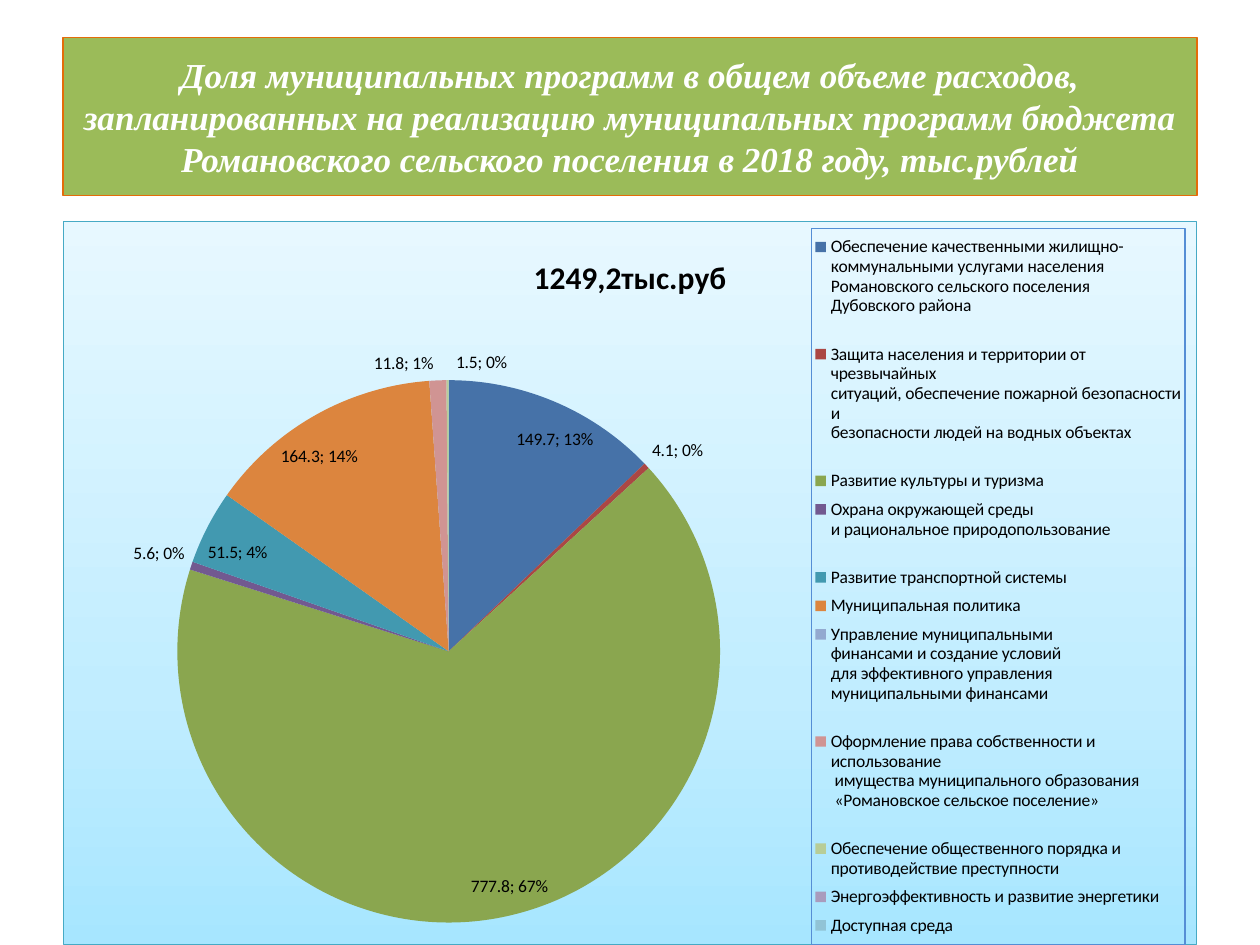
import pptx
import pptx.chart.data
import pptx.dml.color
import pptx.enum.chart
import pptx.enum.text
import pptx.oxml
import pptx.oxml.ns
import pptx.util

RGBColor = pptx.dml.color.RGBColor
Inches = pptx.util.Inches
Pt = pptx.util.Pt
qn = pptx.oxml.ns.qn

WHITE = RGBColor(0xFF, 0xFF, 0xFF)
BLACK = RGBColor(0x00, 0x00, 0x00)
GREEN = RGBColor(0x9B, 0xBB, 0x59)
ORANGE = RGBColor(0xE4, 0x6C, 0x0A)
SLICE_COLORS = [
    RGBColor(0x46, 0x72, 0xA8),
    RGBColor(0xAB, 0x47, 0x44),
    RGBColor(0x8A, 0xA6, 0x4F),
    RGBColor(0x72, 0x59, 0x90),
    RGBColor(0x42, 0x99, 0xB0),
    RGBColor(0xDC, 0x85, 0x3E),
    RGBColor(0x93, 0xA9, 0xD0),
    RGBColor(0xD0, 0x94, 0x93),
    RGBColor(0xB8, 0xCD, 0x97),
    RGBColor(0xA9, 0x9B, 0xBD),
    RGBColor(0x91, 0xC3, 0xD5),
]
PROGRAMS = [
    ("Обеспечение качественными жилищно-\nкоммунальными услугами населения \n"
     "Романовского сельского поселения\nДубовского района\n", 149.7),
    ("Защита населения и территории от чрезвычайных \n"
     "ситуаций, обеспечение пожарной безопасности и \n"
     "безопасности людей на водных объектах\n", 4.1),
    ("Развитие культуры и туризма", 777.8),
    ("Охрана окружающей среды \nи рациональное природопользование\n", 5.6),
    ("Развитие транспортной системы", 51.5),
    ("Муниципальная политика", 164.3),
    ("Управление муниципальными \nфинансами и создание условий\n"
     "для эффективного управления \nмуниципальными финансами\n", 0),
    ("Оформление права собственности и использование\n"
     " имущества муниципального образования\n"
     " «Романовское сельское поселение»\n", 11.8),
    ("Обеспечение общественного порядка и противодействие преступности", 1.5),
    ("Энергоэффективность и развитие энергетики", 0),
    ("Доступная среда", 0),
]
NAMESPACES = (
    'xmlns:c="http://schemas.openxmlformats.org/drawingml/2006/chart" '
    'xmlns:a="http://schemas.openxmlformats.org/drawingml/2006/main"'
)


def chart_xml(tag, content):
    return pptx.oxml.parse_xml(f"<c:{tag} {NAMESPACES}>{content}</c:{tag}>")


def place(element, index, **fractions):
    for layout in element.findall(qn("c:layout")):
        element.remove(layout)
    inner = '<c:layoutTarget val="inner"/>' if element.tag == qn("c:plotArea") else ""
    modes = '<c:xMode val="edge"/><c:yMode val="edge"/>'
    sizes = "".join(f'<c:{name} val="{value}"/>' for name, value in fractions.items())
    manual = f"<c:manualLayout>{inner}{modes}{sizes}</c:manualLayout>"
    element.insert(index, chart_xml("layout", manual))


presentation = pptx.Presentation()
presentation.slide_width = Inches(10)
presentation.slide_height = Inches(7.5)
slide = presentation.slides.add_slide(presentation.slide_layouts[5])

title = slide.shapes.title
title.left, title.top = Inches(0.5), Inches(0.3)
title.width, title.height = Inches(9), Inches(1.25)
title.fill.solid()
title.fill.fore_color.rgb = GREEN
title.line.color.rgb = ORANGE
title.line.width = Pt(0.75)
title.text_frame.word_wrap = True
title.text_frame.vertical_anchor = pptx.enum.text.MSO_ANCHOR.MIDDLE
paragraph = title.text_frame.paragraphs[0]
paragraph.alignment = pptx.enum.text.PP_ALIGN.CENTER
run = paragraph.add_run()
run.text = (
    "Доля муниципальных программ в общем объеме расходов, запланированных "
    "на реализацию муниципальных программ бюджета "
    "Романовского сельского поселения в 2018 году, тыс.рублей"
)
run.font.name = "Times New Roman"
run.font.size = Pt(20)
run.font.bold = True
run.font.italic = True
run.font.color.rgb = WHITE

chart_data = pptx.chart.data.CategoryChartData()
chart_data.categories = [name for name, amount in PROGRAMS]
chart_data.add_series("Series 1", [amount for name, amount in PROGRAMS])
chart = slide.shapes.add_chart(
    pptx.enum.chart.XL_CHART_TYPE.PIE,
    Inches(0.5), Inches(1.75), Inches(9), Inches(5.75), chart_data,
).chart
chart.font.name = "Calibri"
chart.font.size = Pt(10)
chart.font.color.rgb = BLACK

chart.has_title = True
run = chart.chart_title.text_frame.paragraphs[0].add_run()
run.text = "1249,2тыс.руб"
run.font.name = "Calibri"
run.font.size = Pt(18)
run.font.bold = True
run.font.color.rgb = BLACK

plot = chart.plots[0]
plot.vary_by_categories = True
for index, color in enumerate(SLICE_COLORS):
    point = plot.series[0].points[index]
    point.format.fill.solid()
    point.format.fill.fore_color.rgb = color

labels = plot.series[0].data_labels
labels.show_value = True
labels.show_percentage = True
labels.show_category_name = False
labels.show_legend_key = False
labels.position = pptx.enum.chart.XL_LABEL_POSITION.BEST_FIT
labels.font.name = "Calibri"
labels.font.size = Pt(10)
labels.font.color.rgb = BLACK
label_element = plot.series[0]._element.find(qn("c:dLbls"))
separator = chart_xml("separator", "; ")
label_element.find(qn("c:showBubbleSize")).addnext(separator)
empty_slices = [index for index, (name, amount) in enumerate(PROGRAMS) if amount == 0]
for order, index in enumerate(empty_slices):
    hidden = chart_xml("dLbl", f'<c:idx val="{index}"/><c:delete val="1"/>')
    label_element.insert(order, hidden)

chart.has_legend = True
legend = chart.legend
legend.position = pptx.enum.chart.XL_LEGEND_POSITION.RIGHT
legend.include_in_layout = False
legend.font.name = "Calibri"
legend.font.size = Pt(10)
legend.font.color.rgb = BLACK
legend_border = chart_xml("spPr", (
    '<a:noFill/><a:ln w="9525"><a:solidFill><a:srgbClr val="558ED5"/></a:solidFill></a:ln>'
))
legend._element.find(qn("c:txPr")).addprevious(legend_border)

place(chart.chart_title._element, 1, x=0.41, y=0.04)
place(plot._element.getparent(), 0, x=0.1, y=0.22, w=0.48, h=0.75)
place(legend._element, 1, x=0.66, y=0.01, w=0.33, h=0.99)

stops = "".join(
    f'<a:gs pos="{position * 1000}"><a:srgbClr val="{color}"/></a:gs>'
    for position, color in [(0, "A7E6FF"), (35, "C1EDFF"), (100, "E7F8FF")]
)
background = chart_xml("spPr", (
    f'<a:gradFill><a:gsLst>{stops}</a:gsLst><a:lin ang="16200000" scaled="1"/></a:gradFill>'
    '<a:ln w="9525"><a:solidFill><a:srgbClr val="46AAC5"/></a:solidFill></a:ln>'
))
chart._chartSpace.find(qn("c:txPr")).addprevious(background)

presentation.save("out.pptx")
